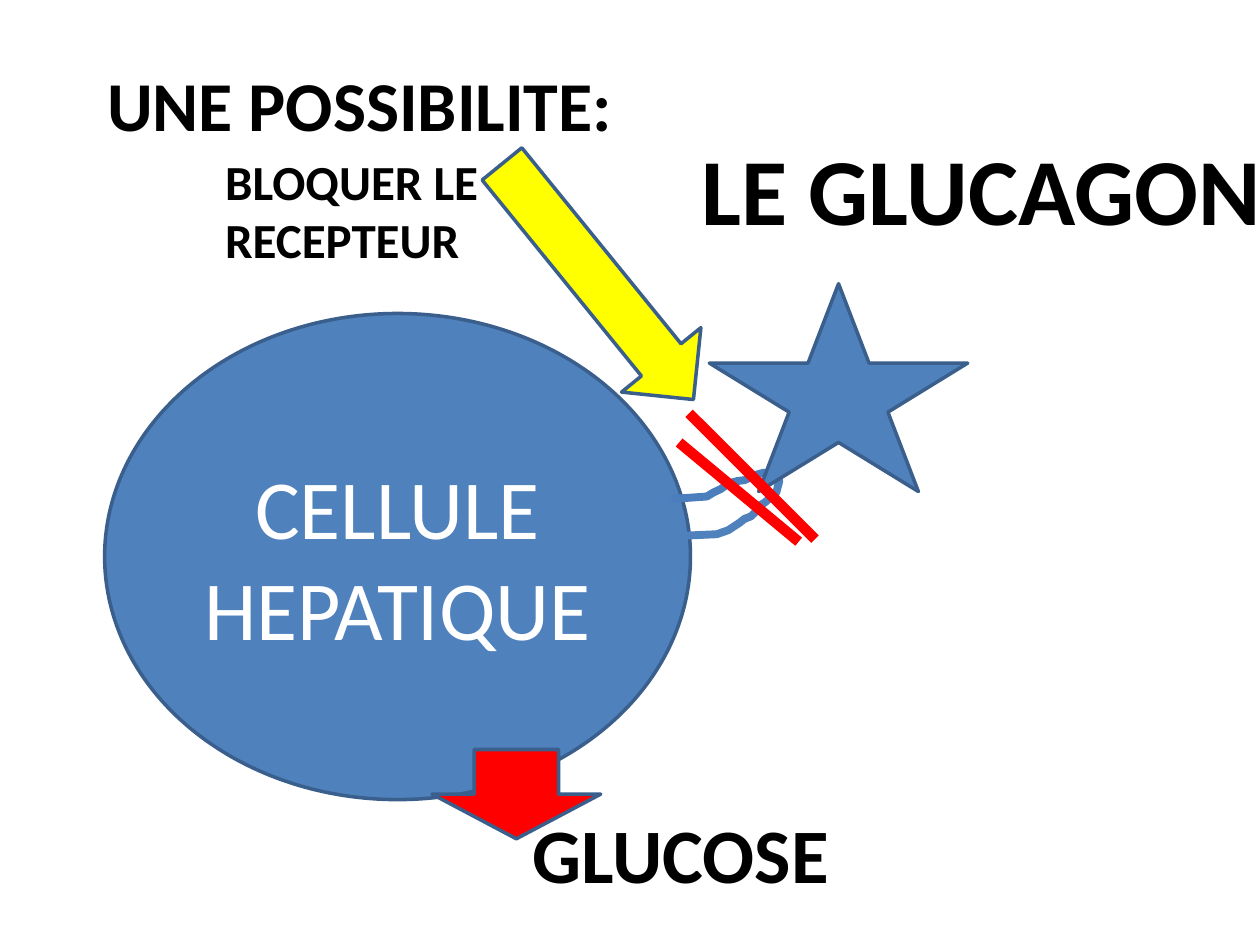
from pptx import Presentation
from pptx.dml.color import RGBColor
from pptx.enum.shapes import MSO_CONNECTOR, MSO_SHAPE as Shape
from pptx.enum.text import MSO_ANCHOR as Anchor, MSO_AUTO_SIZE as AutoSize, PP_ALIGN as Align
from pptx.oxml.ns import qn
from pptx.util import Cm, Pt
from lxml import etree

COLORS = {
    "blue": "4F81BD",
    "strand": "4B7EBC",
    "outline": "3A5F8C",
    "red": "FF0000",
    "yellow": "FFFF00",
    "white": "FFFFFF",
    "black": "000000",
}


def rgb(name):
    return RGBColor.from_string(COLORS[name])


def write_text(tf, text, size=28, bold=False, color="black", align=Align.LEFT, font="Calibri"):
    """Fill a text frame, one paragraph per line of text."""
    for i, line in enumerate(text.split("\n")):
        p = tf.add_paragraph() if i else tf.paragraphs[0]
        p.alignment = align
        r = p.add_run()
        r.text = line
        r.font.name = font
        r.font.size = Pt(size)
        r.font.bold = bold
        r.font.color.rgb = rgb(color)


class Diagram:
    """Draws styled elements on one slide; lengths are in centimetres."""

    def __init__(self, slide, outline="outline", outline_width=2):
        self.shapes = slide.shapes
        self.outline = outline
        self.outline_width = outline_width

    def set_line(self, sp, color, width):
        sp.line.color.rgb = rgb(color)
        sp.line.width = Pt(width)

    def shape(self, kind, box, fill, rotation=0):
        sp = self.shapes.add_shape(kind, *map(Cm, box))
        sp.shadow.inherit = False
        sp.fill.solid()
        sp.fill.fore_color.rgb = rgb(fill)
        self.set_line(sp, self.outline, self.outline_width)
        sp.rotation = rotation
        return sp

    def curve(self, points, color, width=4.5):
        first, *rest = [(Cm(x), Cm(y)) for x, y in points]
        builder = self.shapes.build_freeform(*first)
        builder.add_line_segments(rest, close=False)
        sp = builder.convert_to_shape()
        sp.shadow.inherit = False
        sp.fill.background()
        self.set_line(sp, color, width)

    def line(self, start, end, color, width=6):
        sp = self.shapes.add_connector(MSO_CONNECTOR.STRAIGHT, *map(Cm, start + end))
        self.set_line(sp, color, width)
        etree.SubElement(sp._element.spPr, qn("a:effectLst"))

    def label(self, text, box, size, wrap=True):
        tf = self.shapes.add_textbox(*map(Cm, box)).text_frame
        tf.word_wrap = wrap
        tf.auto_size = AutoSize.SHAPE_TO_FIT_TEXT
        write_text(tf, text, size=size, bold=True)


def main():
    prs = Presentation()
    prs.slide_width, prs.slide_height = Cm(25.4), Cm(19.05)
    d = Diagram(prs.slides.add_slide(prs.slide_layouts[6]))

    # Liver cell
    cell = d.shape(Shape.OVAL, (2.11, 6.32, 11.81, 9.8), "blue")
    cell.text_frame.word_wrap = True
    cell.text_frame.vertical_anchor = Anchor.MIDDLE
    write_text(cell.text_frame, "CELLULE HEPATIQUE", size=48, color="white", align=Align.CENTER)

    # Receptor strands
    d.curve([(13.54, 10.06), (14.25, 10.01), (14.38, 9.93), (14.53, 9.86), (14.68, 9.75),
             (14.86, 9.7), (15.01, 9.68), (15.22, 9.58), (15.39, 9.53), (15.7, 9.53)], "strand")
    d.curve([(13.79, 10.8), (14.45, 10.77), (14.68, 10.69), (14.91, 10.54), (15.01, 10.46),
             (15.14, 10.41), (15.24, 10.31), (15.32, 10.19), (15.42, 10.13), (15.65, 9.93),
             (15.71, 9.7), (15.65, 9.45), (15.62, 9.45)], "blue")

    # Glucagon
    d.shape(Shape.STAR_5_POINT, (14.3, 5.72, 5.21, 4.19), "blue")
    d.label("LE GLUCAGON", (13.89, 2.51, 14.61, 2.57), 54)

    # Strokes that block the receptor
    d.line((13.89, 8.33), (16.43, 10.87), "red")
    d.line((13.69, 8.92), (16.1, 10.92), "red")

    # Glucose release
    d.shape(Shape.DOWN_ARROW, (8.71, 15.11, 3.4, 1.8), "red")
    d.label("GLUCOSE", (10.49, 16.13, 6.48, 2.13), 44)

    # Title and proposed action
    d.label("UNE POSSIBILITE:", (1.91, 1.12, 10.8, 1.96), 40, wrap=False)
    d.shape(Shape.RIGHT_ARROW, (8.99, 4.65, 6.12, 2.06), "yellow", rotation=50.9)
    d.label("BLOQUER LE\nRECEPTEUR", (4.29, 2.92, 5.79, 2.64), 28)

    prs.save("out.pptx")


if __name__ == "__main__":
    main()
